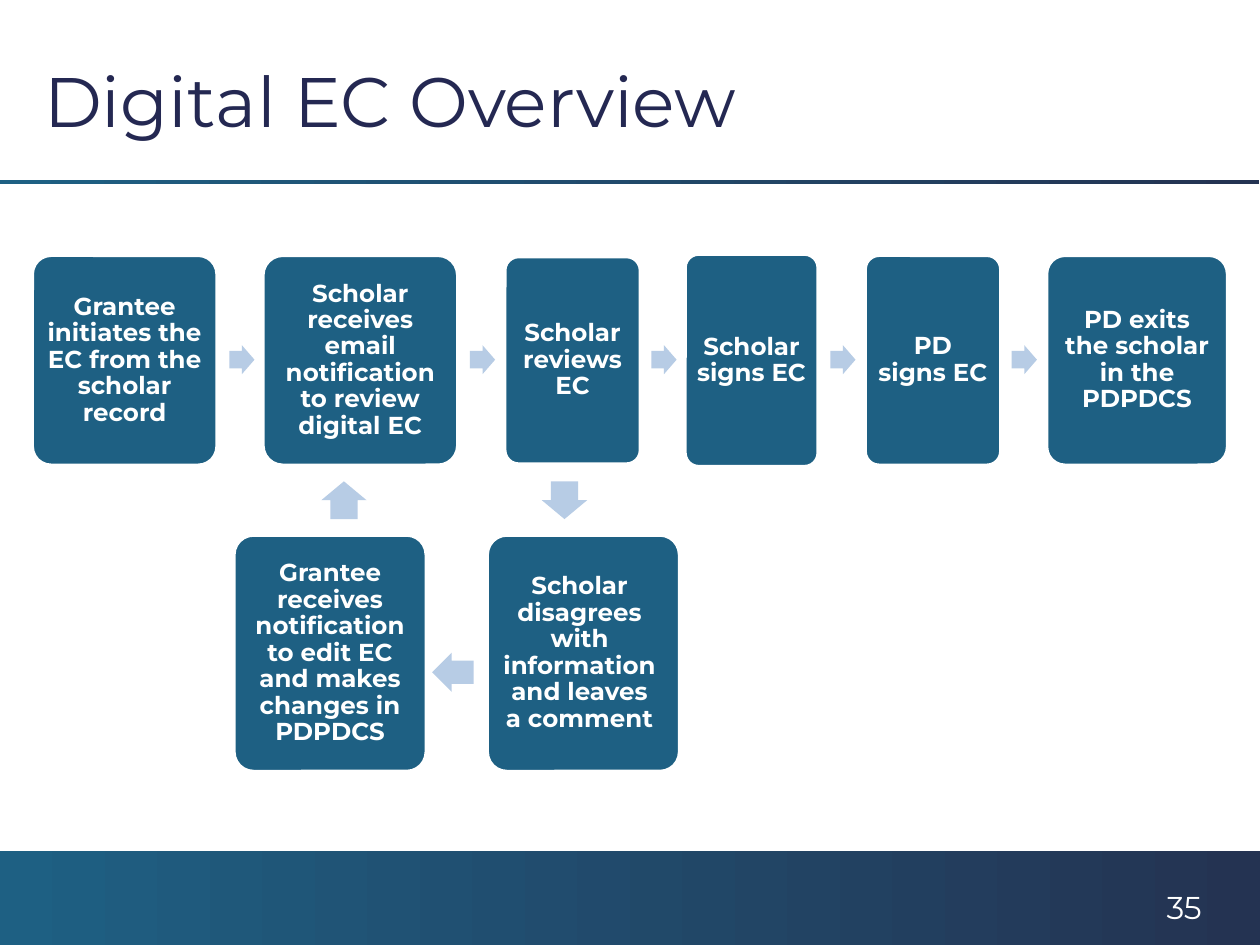
from pptx import Presentation
from pptx.dml.color import RGBColor
from pptx.enum.shapes import MSO_SHAPE
from pptx.enum.text import MSO_ANCHOR, PP_ALIGN
from pptx.util import Inches, Pt

RECTANGLE, ROUNDED = MSO_SHAPE.RECTANGLE, MSO_SHAPE.ROUNDED_RECTANGLE
ARROW = MSO_SHAPE.RIGHT_ARROW
MIDDLE = MSO_ANCHOR.MIDDLE
LEFT, CENTER = PP_ALIGN.LEFT, PP_ALIGN.CENTER
TEAL, NAVY, PALE_BLUE, WHITE = "1E6083", "243352", "B7CCE5", "FFFFFF"
TITLE_COLOR = "242852"


def rgb(value):
    return RGBColor.from_string(value)


def set_font(paragraph, size, color, bold=False):
    font = paragraph.font
    font.name, font.size, font.bold = "Montserrat", Pt(size), bold
    font.color.rgb = rgb(color)


prs = Presentation()
prs.slide_width, prs.slide_height = Inches(10), Inches(7.5)
slide = prs.slides.add_slide(prs.slide_layouts[5])
shapes = slide.shapes

# Footer band and rule under the title
for left, top, height in [(0, 6.75, 0.75), (-0.01, 1.43, 0.03)]:
    band = shapes.add_shape(RECTANGLE, Inches(left), Inches(top), Inches(10), Inches(height))
    band.shadow.inherit = False
    band.line.fill.background()
    band.fill.gradient()
    band.fill.gradient_angle = 0
    for stop, color in zip(band.fill.gradient_stops, (TEAL, NAVY)):
        stop.color.rgb = rgb(color)

title = shapes.title
title.left, title.top = Inches(0.25), Inches(0.25)
title.width, title.height = Inches(9.49), Inches(1.08)
title.text_frame.text = "Digital EC Overview"
title.text_frame.vertical_anchor = MIDDLE
title.text_frame.paragraphs[0].alignment = LEFT
set_font(title.text_frame.paragraphs[0], 40, TITLE_COLOR)

# Steps: left, top, width, height, right inset, text
steps = [
    (0.26, 2.03, 1.46, 1.66, 0.06, "Grantee initiates the EC from the scholar record"),
    (2.09, 2.03, 1.54, 1.66, 0.06, "Scholar receives email notification to review digital EC"),
    (4.01, 2.04, 1.07, 1.64, 0.06, "Scholar reviews EC"),
    (5.44, 2.02, 1.05, 1.68, 0.06, "Scholar signs EC"),
    (6.87, 2.03, 1.07, 1.66, 0.06, "PD signs EC"),
    (8.31, 2.03, 1.43, 1.66, 0.06, "PD exits the scholar in the PDPDCS"),
    (3.87, 4.25, 1.52, 1.87, 0.12, "Scholar disagrees with information and leaves a comment"),
    (1.86, 4.25, 1.52, 1.87, 0.06,
     "Grantee receives notification to edit EC and makes changes in PDPDCS"),
]
for left, top, width, height, right_inset, text in steps:
    step = shapes.add_shape(ROUNDED, Inches(left), Inches(top), Inches(width), Inches(height))
    step.adjustments[0] = 0.1
    step.shadow.inherit = False
    step.fill.solid()
    step.fill.fore_color.rgb = rgb(TEAL)
    step.line.color.rgb = rgb(WHITE)
    step.line.width = Pt(1.5)
    frame = step.text_frame
    frame.word_wrap = True
    frame.vertical_anchor = MIDDLE
    frame.margin_left = frame.margin_top = frame.margin_bottom = Inches(0.06)
    frame.margin_right = Inches(right_inset)
    frame.text = text
    label = frame.paragraphs[0]
    label.alignment = CENTER
    label.line_spacing = 0.9
    set_font(label, 14, WHITE, bold=True)

# Arrows: main row, then the loop back through the disagreement
arrows = [(left, 2.74, 0.2, 0.23, 0) for left in (1.82, 3.73, 5.17, 6.59, 8.03)]
arrows += [
    (4.33, 3.79, 0.3, 0.36, 90),
    (3.43, 5.18, 0.33, 0.31, 180),
    (2.58, 3.79, 0.3, 0.36, 270),
]
for left, top, width, height, rotation in arrows:
    arrow = shapes.add_shape(ARROW, Inches(left), Inches(top), Inches(width), Inches(height))
    arrow.adjustments[0] = 0.6
    arrow.adjustments[1] = 0.5
    arrow.rotation = rotation
    arrow.shadow.inherit = False
    arrow.fill.solid()
    arrow.fill.fore_color.rgb = rgb(PALE_BLUE)
    arrow.line.fill.background()

page_number = shapes.add_textbox(Inches(9.16), Inches(7), Inches(0.58), Inches(0.27))
page_number.text_frame.word_wrap = True
page_number.text_frame.text = "35"
set_font(page_number.text_frame.paragraphs[0], 18, WHITE)

prs.save("out.pptx")
